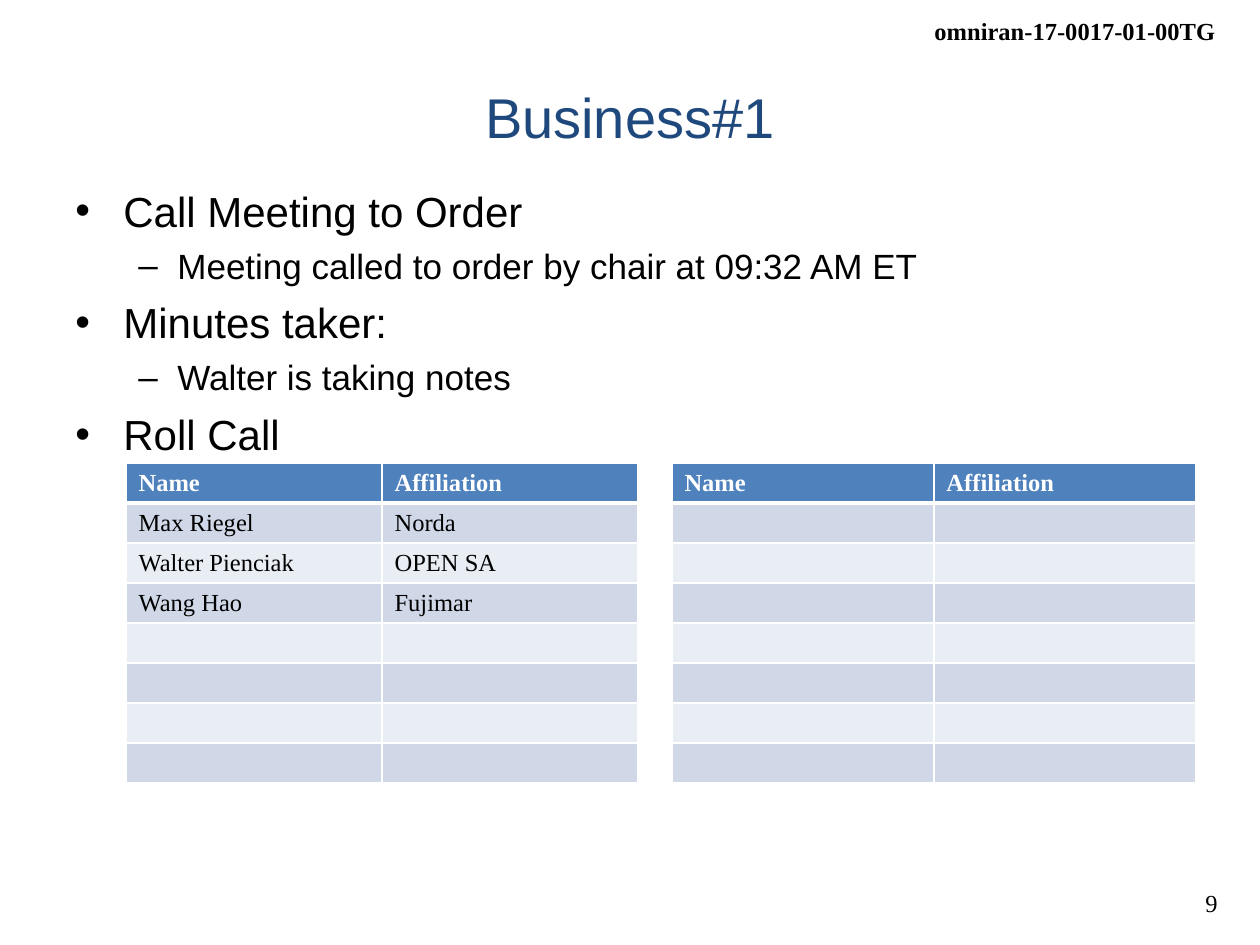
from lxml.etree import SubElement
from pptx import Presentation
from pptx.dml.color import RGBColor
from pptx.enum.text import MSO_ANCHOR, PP_ALIGN
from pptx.oxml.ns import qn
from pptx.util import Pt

PX = 914400 // 126


def write(paragraph, text, font="Arial", size=14, color="000000", bold=False,
          align=PP_ALIGN.LEFT):
    paragraph.alignment = align
    run = paragraph.add_run()
    run.text = text
    run.font.name = font
    run.font.size = Pt(size)
    run.font.bold = bold
    run.font.color.rgb = RGBColor.from_string(color)


def add_text_frame(left, top, width, height, wrap=True):
    box = slide.shapes.add_textbox(left * PX, top * PX, width * PX, height * PX)
    box.text_frame.word_wrap = wrap
    return box.text_frame


presentation = Presentation()
presentation.slide_width = 1260 * PX
presentation.slide_height = 945 * PX
slide = presentation.slides.add_slide(presentation.slide_layouts[6])

# Document number and page number
for text, left, top, width, bold in [
    ("omniran-17-0017-01-00TG", 920, 10, 308, True),
    ("9", 1176, 882, 54, False),
]:
    frame = add_text_frame(left, top, width, 43, wrap=False)
    write(frame.paragraphs[0], text, font="Times New Roman", bold=bold,
          align=PP_ALIGN.RIGHT)

# Title
title = add_text_frame(63, 38, 1134, 157)
title.vertical_anchor = MSO_ANCHOR.MIDDLE
write(title.paragraphs[0], "Business#1", size=32, color="1F497D",
      align=PP_ALIGN.CENTER)

# Agenda: size, space before, left margin, hanging indent and bullet by level
LEVELS = [(24, 6, 48, 48, "•"), (20, 5, 102, 39, "–")]
AGENDA = [
    (0, "Call Meeting to Order"),
    (1, "Meeting called to order by chair at 09:32 AM ET"),
    (0, "Minutes taker:"),
    (1, "Walter is taking notes"),
    (0, "Roll Call"),
]
agenda = add_text_frame(63, 179, 1134, 357)
for index, (level, text) in enumerate(AGENDA):
    size, space, margin, hanging, bullet = LEVELS[level]
    paragraph = agenda.add_paragraph() if index else agenda.paragraphs[0]
    paragraph.level = level
    paragraph.space_before = Pt(space)
    write(paragraph, text, size=size)
    properties = paragraph._p.get_or_add_pPr()
    properties.set("marL", str(margin * PX))
    properties.set("indent", str(-hanging * PX))
    SubElement(properties, qn("a:buFont"), typeface="Arial")
    SubElement(properties, qn("a:buChar"), char=bullet)

# Roll call: two name lists side by side, parted by a white column
HEADER = ["Name", "Affiliation", "", "Name", "Affiliation"]
ATTENDEES = [
    ["Max Riegel", "Norda"],
    ["Walter Pienciak", "OPEN SA"],
    ["Wang Hao", "Fujimar"],
]
COLUMN_WIDTHS = [256, 256, 34, 262, 262]
ROW_COUNT, ROW_HEIGHT, GAP_COLUMN = 8, 40, 2
rows = [HEADER] + ATTENDEES
table = slide.shapes.add_table(
    ROW_COUNT, len(COLUMN_WIDTHS), 126 * PX, 463 * PX,
    sum(COLUMN_WIDTHS) * PX, ROW_COUNT * ROW_HEIGHT * PX).table
for column, width in zip(table.columns, COLUMN_WIDTHS):
    column.width = width * PX

for row_index, row in enumerate(table.rows):
    row.height = ROW_HEIGHT * PX
    is_header = row_index == 0
    row_fill = "4F81BD" if is_header else ("E9EDF4", "D0D8E8")[row_index % 2]
    texts = rows[row_index] if row_index < len(rows) else []
    for column_index, cell in enumerate(row.cells):
        cell.margin_top = cell.margin_bottom = 0
        cell.vertical_anchor = MSO_ANCHOR.MIDDLE
        if column_index < len(texts) and texts[column_index]:
            write(cell.text_frame.paragraphs[0], texts[column_index],
                  font="Times New Roman", bold=is_header,
                  color="FFFFFF" if is_header else "000000")
        properties = cell._tc.get_or_add_tcPr()
        for side in ("lnL", "lnR", "lnT", "lnB"):
            thick = (side == "lnB" and is_header) or (side == "lnT" and row_index == 1)
            line = SubElement(properties, qn(f"a:{side}"), w=str(Pt(3 if thick else 1)))
            line_fill = SubElement(line, qn("a:solidFill"))
            SubElement(line_fill, qn("a:srgbClr"), val="FFFFFF")
        cell.fill.solid()
        cell.fill.fore_color.rgb = RGBColor.from_string(
            "FFFFFF" if column_index == GAP_COLUMN else row_fill)

presentation.save("out.pptx")
